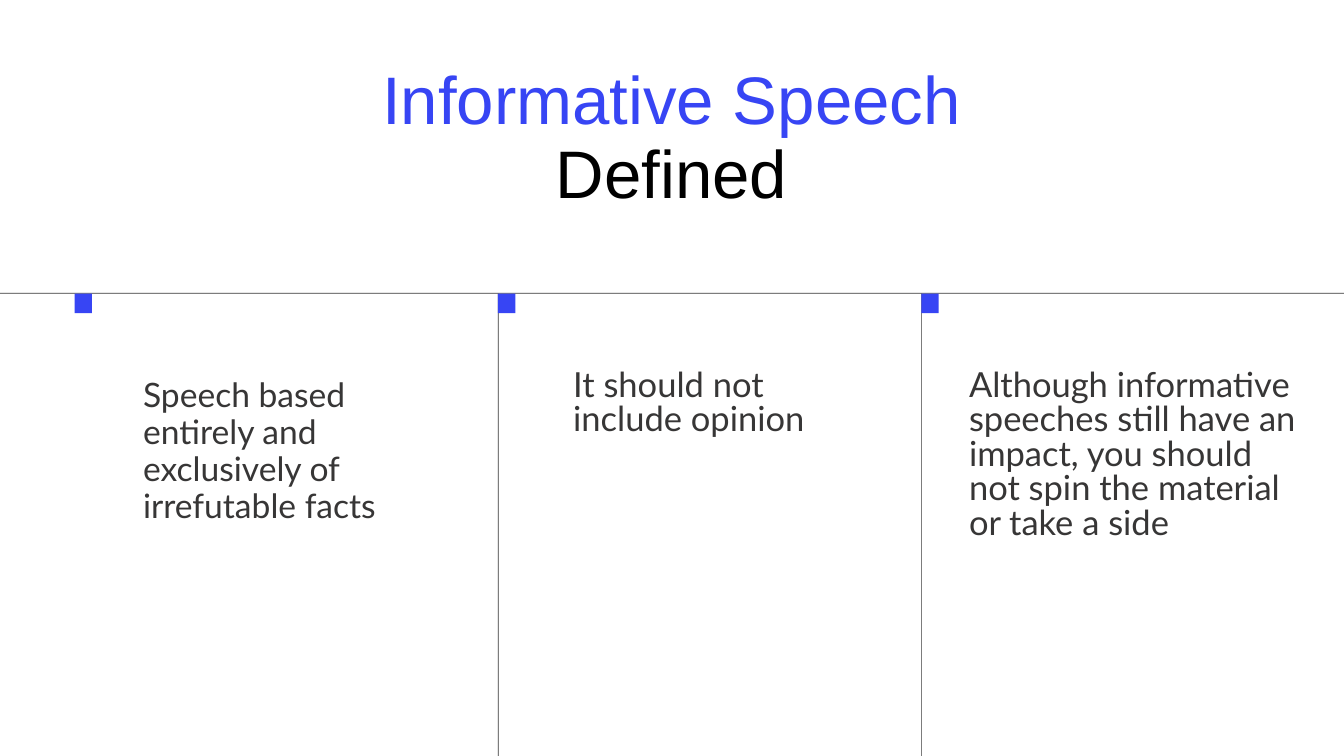
import pptx
import pptx.dml.color
import pptx.enum.shapes
import pptx.enum.text
import pptx.util
from pptx.util import Inches, Pt

BLUE, DARK, BLACK = "3745F4", "373636", "000000"
SLIDE_W, SLIDE_H = 20, 11.25
TITLE = [("Informative Speech", BLUE), ("Defined", BLACK)]

RULE_TOP, RULE = 4.36, 0.01
BODY_TOP = RULE_TOP + RULE
FIRST_COLUMN, COLUMN_W = 1.11, 6.3
MARKER_W, MARKER_H = 0.26, 0.29

# text, box (left, top, width, height), font size, line spacing, level, indent
POINTS = [
    ("Speech based entirely and exclusively of irrefutable facts",
     (1.71, 5.61, 4.58, 2.8), 36, 39.6, 1, 0.42),
    ("It should not include opinion",
     (8.53, 5.5, 4.01, 1.04), 37, 37, 0, 0),
    ("Although informative speeches still have an impact, "
     "you should not spin the material or take a side",
     (14.42, 5.5, 4.98, 3.63), 37, 37, 0, 0),
]


def color(value):
    return pptx.dml.color.RGBColor.from_string(value)


def add_bar(slide, left, top, width, height, fill):
    bar = slide.shapes.add_shape(
        pptx.enum.shapes.MSO_SHAPE.RECTANGLE,
        Inches(left), Inches(top), Inches(width), Inches(height))
    bar.shadow.inherit = False
    bar.fill.solid()
    bar.fill.fore_color.rgb = color(fill)
    bar.line.fill.background()


def prepare_frame(frame):
    """Remove insets, wrap, and start the text at the top."""
    frame.margin_left = frame.margin_right = 0
    frame.margin_top = frame.margin_bottom = 0
    frame.word_wrap = True
    frame.auto_size = pptx.enum.text.MSO_AUTO_SIZE.NONE
    frame.vertical_anchor = pptx.enum.text.MSO_ANCHOR.TOP


def add_title(slide):
    title = slide.shapes.title
    title.left, title.top = Inches(3.83), Inches(0.96)
    title.width, title.height = Inches(12.33), Inches(2.22)
    prepare_frame(title.text_frame)
    paragraph = title.text_frame.paragraphs[0]
    paragraph.alignment = pptx.enum.text.PP_ALIGN.CENTER
    paragraph.line_spacing = Pt(79.2)
    paragraph.font.size = Pt(72)
    paragraph.font.name = "Arial"
    for i, (words, tint) in enumerate(TITLE):
        if i:
            paragraph.add_line_break()
        run = paragraph.add_run()
        run.text = words
        run.font.size = Pt(72)
        run.font.name = "Arial"
        run.font.color.rgb = color(tint)


def add_point(slide, words, box, size, spacing, level, indent):
    frame = slide.shapes.add_textbox(*map(Inches, box)).text_frame
    prepare_frame(frame)
    paragraph = frame.paragraphs[0]
    paragraph.text = words
    paragraph.level = level
    paragraph.line_spacing = Pt(spacing)
    paragraph.font.size = Pt(size)
    paragraph.font.name = "Lato"
    paragraph.font.color.rgb = color(DARK)
    properties = paragraph._p.get_or_add_pPr()
    properties.set("marL", str(Inches(indent)))
    properties.set("indent", "0")


def main():
    deck = pptx.Presentation()
    deck.slide_width, deck.slide_height = Inches(SLIDE_W), Inches(SLIDE_H)
    slide = deck.slides.add_slide(deck.slide_layouts[5])

    add_title(slide)
    add_bar(slide, 0, RULE_TOP, SLIDE_W, RULE, DARK)
    for column, point in enumerate(POINTS):
        left = FIRST_COLUMN + column * COLUMN_W
        if column:
            add_bar(slide, left, BODY_TOP, RULE, SLIDE_H - BODY_TOP, DARK)
        add_bar(slide, left, BODY_TOP, MARKER_W, MARKER_H, BLUE)
        add_point(slide, *point)

    deck.save("out.pptx")


if __name__ == "__main__":
    main()
